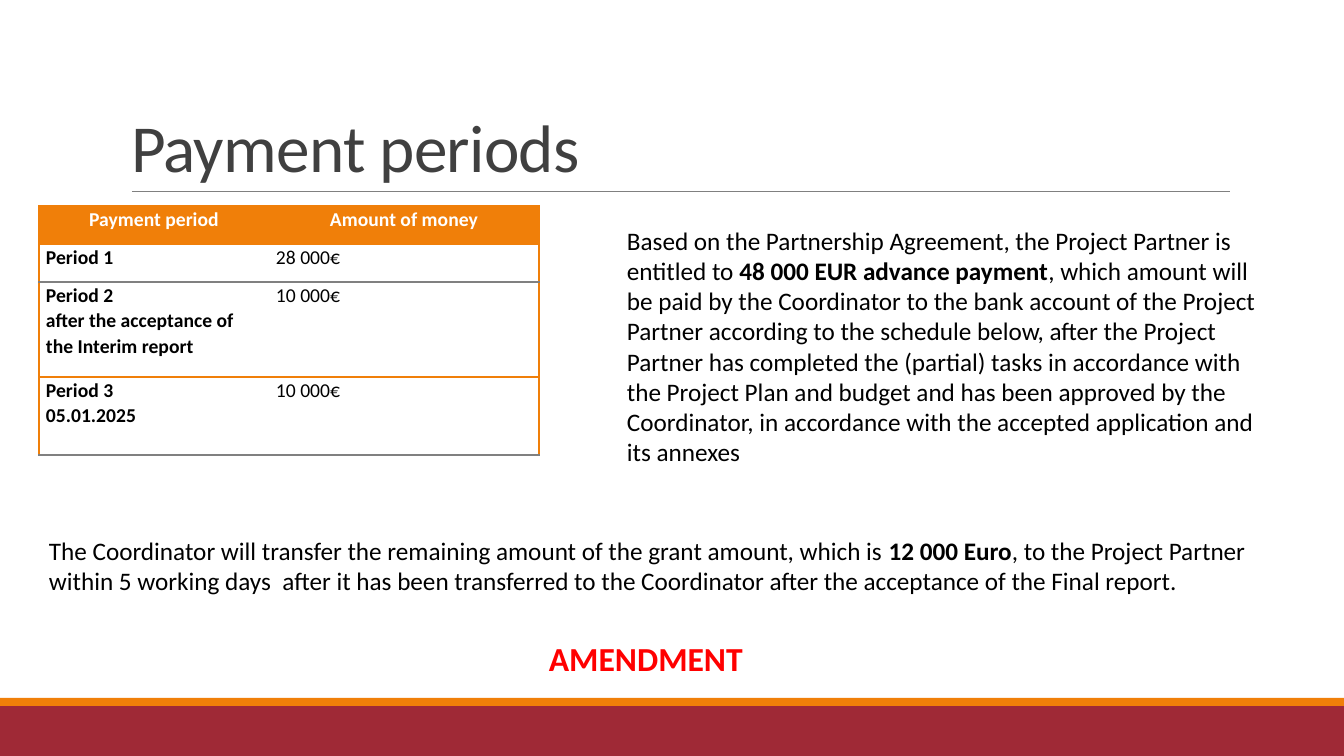
from dataclasses import dataclass

from lxml import etree
from pptx import Presentation
from pptx import util as u
from pptx.dml.color import RGBColor
from pptx.enum import shapes, text
from pptx.oxml.ns import qn


@dataclass(frozen=True)
class Theme:
    font: str = "Calibri"
    orange: str = "F07F09"
    red: str = "9F2936"
    rule: str = "808080"
    title: str = "404040"
    ink: str = "000000"
    paper: str = "FFFFFF"
    alert: str = "FF0000"
    title_size: int = 48
    alert_size: int = 24
    body_size: int = 18
    table_size: int = 14


THEME = Theme()
SLIDE = (1344, 756)
TITLE = "Payment periods"
TITLE_BOX = (121, 31, 1109, 160)
TITLE_RULE = (132, 191, 1230, 191)
BANDS = [((0, 706, 1344, 50), THEME.red), ((0, 698, 1344, 8), THEME.orange)]

TABLE_AT = (39, 206)
COLUMNS = [230, 270]
ROWS = [38, 38, 95, 78]
PAYMENTS = [
    (["Payment period"], ["Amount of money"]),
    (["Period 1"], ["28 000€"]),
    (["Period 2", "after the acceptance of the Interim report"], ["10 000€"]),
    (["Period 3", "05.01.2025"], ["10 000€"]),
]
ROW_LINES = [THEME.orange, THEME.orange, THEME.rule, THEME.orange, THEME.rule]

NOTES = [
    ((617, 220, 652, 285), THEME.body_size, THEME.ink, [
        ("Based on the Partnership Agreement, the Project Partner is entitled to ", False),
        ("48 000 EUR advance payment", True),
        (", which amount will be paid by the Coordinator to the bank account of the "
         "Project Partner according to the schedule below, after the Project Partner has "
         "completed the (partial) tasks in accordance with the Project Plan and budget and "
         "has been approved by the Coordinator, in accordance with the accepted application "
         "and its annexes", False),
    ]),
    ((39, 530, 1243, 102), THEME.body_size, THEME.ink, [
        ("The Coordinator will transfer the remaining amount of the grant amount, which is ", False),
        ("12 000 Euro", True),
        (", to the Project Partner within 5 working days  after it has been transferred to "
         "the Coordinator after the acceptance of the Final report.", False),
    ]),
    ((539, 633, 315, 50), THEME.alert_size, THEME.alert, [("AMENDMENT", True)]),
]


def px(length):
    return u.Emu(round(length * 914400 / 100.8))


def scaled(lengths):
    return [px(length) for length in lengths]


def color(code):
    return RGBColor.from_string(code)


def add_run(paragraph, words, size, ink, bold=False):
    run = paragraph.add_run()
    run.text = words
    run.font.name = THEME.font
    run.font.size = u.Pt(size)
    run.font.bold = bold
    run.font.color.rgb = color(ink)
    return run


def add_band(slide, box, fill):
    band = slide.shapes.add_shape(shapes.MSO_SHAPE.RECTANGLE, *scaled(box))
    band.shadow.inherit = False
    band.fill.solid()
    band.fill.fore_color.rgb = color(fill)
    band.line.fill.background()


def add_rule(slide, ends):
    rule = slide.shapes.add_connector(shapes.MSO_CONNECTOR.STRAIGHT, *scaled(ends))
    rule.line.color.rgb = color(THEME.rule)
    rule.line.width = u.Pt(0.5)
    etree.SubElement(rule._element.spPr, qn("a:effectLst"))


def set_title(slide):
    title = slide.shapes.title
    title.left, title.top, title.width, title.height = scaled(TITLE_BOX)
    frame = title.text_frame
    frame.auto_size = text.MSO_AUTO_SIZE.NONE
    frame.vertical_anchor = text.MSO_ANCHOR.BOTTOM
    paragraph = frame.paragraphs[0]
    paragraph.alignment = text.PP_ALIGN.LEFT
    paragraph.line_spacing = 0.85
    run = add_run(paragraph, TITLE, THEME.title_size, THEME.title)
    run.font._element.set("spc", "-50")


def add_note(slide, box, size, ink, runs):
    frame = slide.shapes.add_textbox(*scaled(box)).text_frame
    frame.word_wrap = True
    for words, bold in runs:
        add_run(frame.paragraphs[0], words, size, ink, bold)


def set_borders(cell, borders):
    properties = cell._tc.get_or_add_tcPr()
    for side in ("lnL", "lnR", "lnT", "lnB"):
        line = etree.SubElement(properties, qn(f"a:{side}"), w=str(u.Pt(1)))
        if borders.get(side):
            fill = etree.SubElement(line, qn("a:solidFill"))
            etree.SubElement(fill, qn("a:srgbClr"), val=borders[side])
        else:
            etree.SubElement(line, qn("a:noFill"))


def fill_cell(cell, row, column, lines):
    header = row == 0
    set_borders(cell, {
        "lnL": THEME.orange if column == 0 else None,
        "lnR": THEME.orange if column == len(COLUMNS) - 1 else None,
        "lnT": ROW_LINES[row],
        "lnB": ROW_LINES[row + 1],
    })
    cell.fill.solid()
    cell.fill.fore_color.rgb = color(THEME.orange if header else THEME.paper)
    cell.margin_left = cell.margin_right = px(7)
    cell.margin_top = cell.margin_bottom = 0
    frame = cell.text_frame
    for index, words in enumerate(lines):
        paragraph = frame.add_paragraph() if index else frame.paragraphs[0]
        paragraph.alignment = text.PP_ALIGN.CENTER if header else text.PP_ALIGN.LEFT
        paragraph.line_spacing = 1.07
        add_run(paragraph, words, THEME.table_size,
                THEME.paper if header else THEME.ink, header or column == 0)


def add_payments(slide):
    box = (*TABLE_AT, sum(COLUMNS), sum(ROWS))
    table = slide.shapes.add_table(len(ROWS), len(COLUMNS), *scaled(box)).table
    table.horz_banding = False
    for column, width in enumerate(COLUMNS):
        table.columns[column].width = px(width)
    for row, height in enumerate(ROWS):
        table.rows[row].height = px(height)
        for column, lines in enumerate(PAYMENTS[row]):
            fill_cell(table.cell(row, column), row, column, lines)


def main():
    presentation = Presentation()
    presentation.slide_width, presentation.slide_height = scaled(SLIDE)
    slide = presentation.slides.add_slide(presentation.slide_layouts[5])
    for box, fill in BANDS:
        add_band(slide, box, fill)
    add_rule(slide, TITLE_RULE)
    set_title(slide)
    add_payments(slide)
    for note in NOTES:
        add_note(slide, *note)
    presentation.save("out.pptx")


if __name__ == "__main__":
    main()
